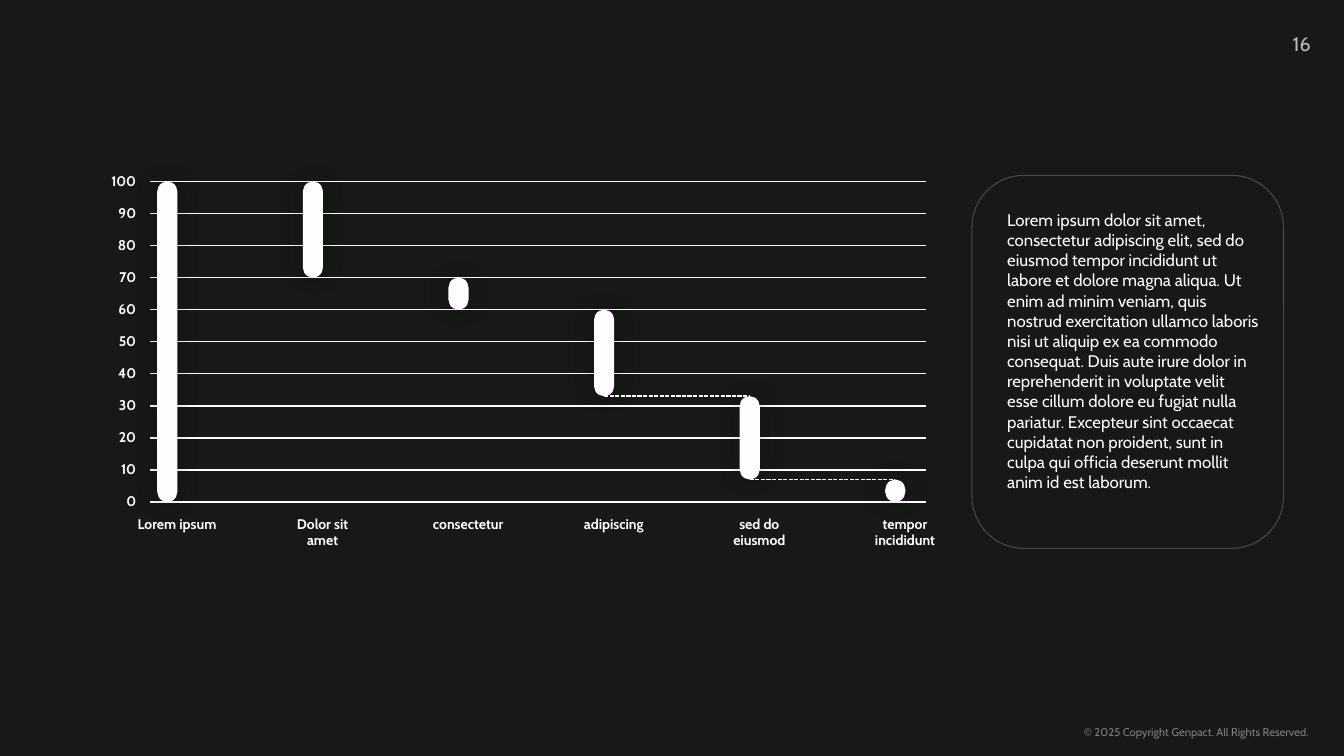
import pptx
import pptx.dml.color
import pptx.enum.dml
import pptx.enum.shapes
import pptx.enum.text
import pptx.oxml
import pptx.oxml.ns
import pptx.oxml.xmlchemy
import pptx.util

Inches = pptx.util.Inches
ALIGN = pptx.enum.text.PP_ALIGN
ANCHOR = pptx.enum.text.MSO_ANCHOR
ROUND = pptx.enum.shapes.MSO_SHAPE.ROUNDED_RECTANGLE
FONT = "Cabin"
WHITE = "FFFFFF"
SNOW = "FFFDFF"
TOP = 100
STEPS = [
    ("Lorem ipsum", 100, 0),
    ("Dolor sit amet", 100, 70),
    ("consectetur", 70, 60),
    ("adipiscing", 60, 33),
    ("sed do eiusmod", 33, 7),
    ("tempor incididunt", 7, 0),
]
BODY = (
    "Lorem ipsum dolor sit amet, consectetur adipiscing elit, sed do eiusmod "
    "tempor incididunt ut labore et dolore magna aliqua. Ut enim ad minim veniam, "
    "quis nostrud exercitation ullamco laboris nisi ut aliquip ex ea commodo "
    "consequat. Duis aute irure dolor in reprehenderit in voluptate velit esse "
    "cillum dolore eu fugiat nulla pariatur. Excepteur sint occaecat cupidatat non "
    "proident, sunt in culpa qui officia deserunt mollit anim id est laborum."
)
GLOW = (
    '<a:effectLst xmlns:a="http://schemas.openxmlformats.org/drawingml/2006/main">'
    '<a:outerShdw blurRad="203200" dist="0" dir="0" algn="ctr" rotWithShape="0">'
    '<a:srgbClr val="000000"><a:alpha val="23000"/></a:srgbClr>'
    "</a:outerShdw></a:effectLst>"
)


def color(code):
    """Turn a hex string into a colour."""
    return pptx.dml.color.RGBColor.from_string(code)


def write(slide, box, text, size, code, align=ALIGN.LEFT, bold=False, anchor=ANCHOR.TOP):
    """Place a text box without margins and return its run."""
    frame = slide.shapes.add_textbox(*map(Inches, box)).text_frame
    frame.word_wrap = True
    frame.vertical_anchor = anchor
    frame.margin_left = frame.margin_right = frame.margin_top = frame.margin_bottom = 0
    frame.text = text
    para = frame.paragraphs[0]
    para.alignment = align
    run = para.runs[0]
    run.font.name = FONT
    run.font.size = pptx.util.Pt(size)
    run.font.bold = bold
    run.font.color.rgb = color(code)
    return run


def rule(slide, start, end):
    """Draw a thin straight line between two points."""
    line = slide.shapes.add_connector(
        pptx.enum.shapes.MSO_CONNECTOR.STRAIGHT, *map(Inches, start + end))
    line.line.color.rgb = color(SNOW)
    line.line.width = pptx.util.Pt(1)
    line._element.spPr.append(pptx.oxml.xmlchemy.OxmlElement("a:effectLst"))
    return line


def scale(slide, box):
    """Draw the grid lines and their values."""
    left, top, width, height = box
    for value in range(0, TOP + 1, 10):
        y = top + height * (1 - value / TOP)
        rule(slide, (left, y), (left + width, y))
        write(slide, (left - 0.5, y - 0.09, 0.36, 0.17), str(value), 10, WHITE,
              ALIGN.RIGHT, True)


def bars(slide, box):
    """Draw the falling bars, their labels and the dashed links."""
    left, top, width, height = box
    step = (width - 0.47) / (len(STEPS) - 1)
    last = None
    for i, (label, high, low) in enumerate(STEPS):
        x = left + 0.07 + i * step
        y = top + height * (1 - high / TOP)
        bar = slide.shapes.add_shape(
            ROUND, *map(Inches, (x, y, 0.2, height * (high - low) / TOP)))
        bar.adjustments[0] = 0.5
        bar.fill.solid()
        bar.fill.fore_color.rgb = color(SNOW)
        bar.line.fill.background()
        bar._element.spPr.append(pptx.oxml.parse_xml(GLOW))
        write(slide, (x - 0.2, top + height + 0.13, 0.79, 0.34), label, 10, WHITE,
              ALIGN.CENTER, True)
        if last is not None:
            link = rule(slide, (x, y), (x, y))
            link.begin_connect(last, 0 if i == 1 else 2)
            link.end_connect(bar, 0)
            link.line.dash_style = pptx.enum.dml.MSO_LINE.SQUARE_DOT
        last = bar


def panel(slide, box):
    """Draw the outlined panel with its text."""
    left, top, width, height = box
    write(slide, (left + 0.35, top + 0.34, 2.5, 3.23), BODY, 12, WHITE)
    frame = slide.shapes.add_shape(ROUND, *map(Inches, box))
    frame.shadow.inherit = False
    frame.fill.background()
    frame.line.color.rgb = color("494949")
    frame.line.width = pptx.util.Pt(0.75)


def edges(slide, box):
    """Write the page number and the copyright line."""
    left, top, width, height = box
    write(slide, (left + width - 0.9, top + 0.32, 0.57, 0.24), "16", 14, "BABABA",
          ALIGN.RIGHT)
    run = write(slide, (left + width - 2.58, top + height - 0.54, 2.39, 0.37),
                "© 2025 Copyright Genpact. All Rights Reserved.", 8, "E6E9E6",
                anchor=ANCHOR.BOTTOM)
    alpha = pptx.oxml.xmlchemy.OxmlElement("a:alpha")
    alpha.set("val", "50000")
    run._r.find(".//" + pptx.oxml.ns.qn("a:srgbClr")).append(alpha)


def main():
    """Build and save the slide."""
    deck = pptx.Presentation()
    deck.slide_width = Inches(13.33)
    deck.slide_height = Inches(7.5)
    slide = deck.slides.add_slide(deck.slide_layouts[6])
    slide.background.fill.solid()
    slide.background.fill.fore_color.rgb = color("161916")
    edges(slide, (0, 0, 13.33, 7.5))
    plot = (1.49, 1.8, 7.69, 3.18)
    scale(slide, plot)
    bars(slide, plot)
    panel(slide, (9.64, 1.74, 3.09, 3.7))
    deck.save("out.pptx")


if __name__ == "__main__":
    main()
